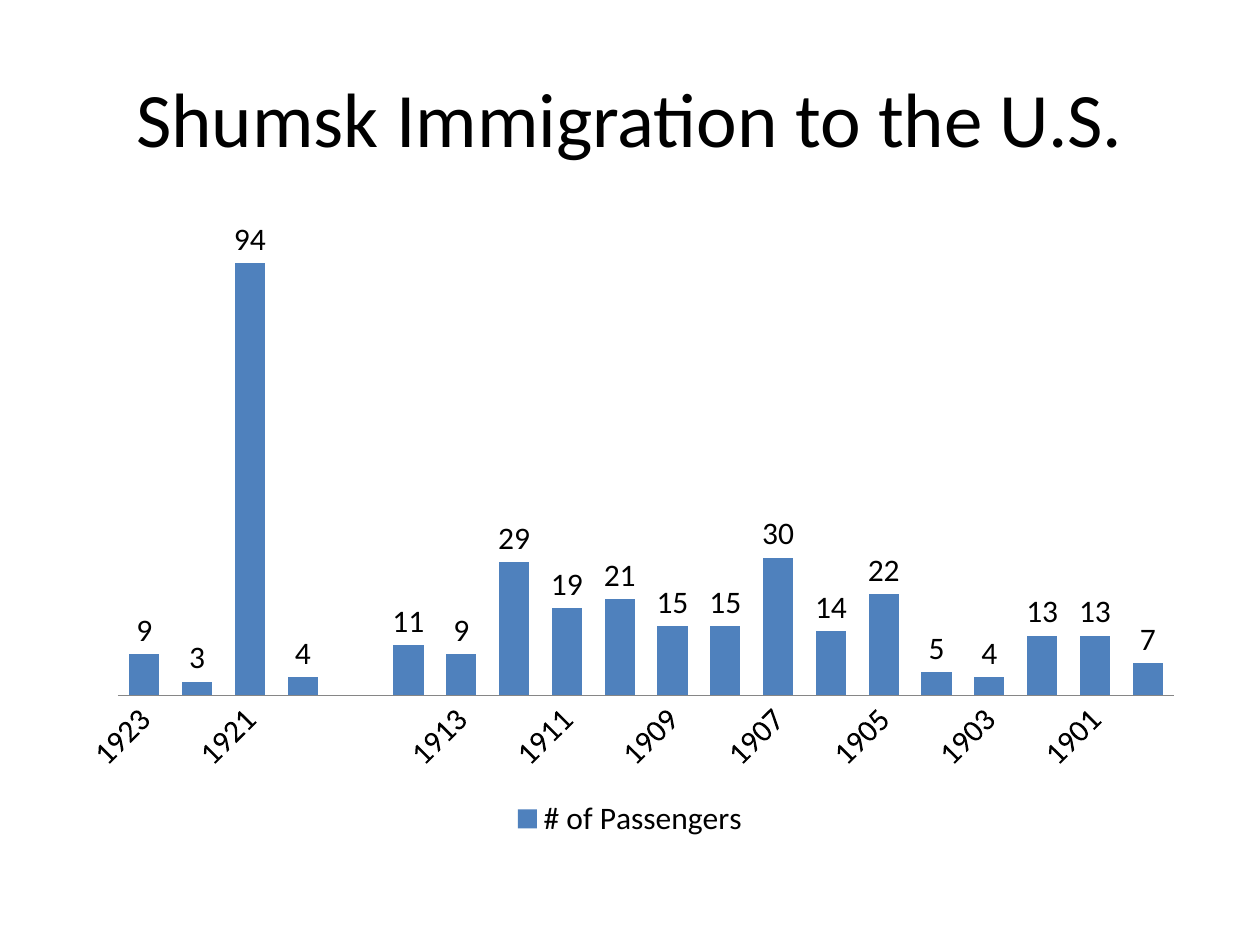
from dataclasses import dataclass

from pptx import Presentation
from pptx.chart.data import CategoryChartData
from pptx.dml.color import RGBColor
from pptx.enum.chart import XL_CHART_TYPE, XL_LABEL_POSITION, XL_LEGEND_POSITION, XL_TICK_MARK
from pptx.enum.text import MSO_ANCHOR, PP_ALIGN
from pptx.util import Inches, Pt

COLUMNS = XL_CHART_TYPE.COLUMN_CLUSTERED
OUTSIDE_END = XL_LABEL_POSITION.OUTSIDE_END
LEGEND_BOTTOM = XL_LEGEND_POSITION.BOTTOM
NO_TICKS = XL_TICK_MARK.NONE
MIDDLE = MSO_ANCHOR.MIDDLE
CENTER = PP_ALIGN.CENTER

FONT = "Calibri"
COLORS = {"text": "000000", "bar": "4F81BD", "axis": "868686"}


@dataclass
class Area:
    left: float
    top: float
    width: float
    height: float

    def lengths(self) -> tuple:
        return tuple(Inches(n) for n in (self.left, self.top, self.width, self.height))


TITLE_AREA = Area(0.5, 0.3, 9, 1.25)
CHART_AREA = Area(0.5, 1.75, 9, 4.95)

# The blank category separates the post-war years from the pre-war years.
YEARS = [*map(str, range(1923, 1919, -1)), "", *map(str, range(1914, 1899, -1))]
PASSENGERS = [9, 3, 94, 4, None, 11, 9, 29, 19, 21, 15, 15, 30, 14, 22, 5, 4, 13, 13, 7]


def color(name: str) -> RGBColor:
    return RGBColor.from_string(COLORS[name])


def style_font(font, size: float) -> None:
    font.name = FONT
    font.size = Pt(size)
    font.color.rgb = color("text")


def add_title(page, text: str, area: Area) -> None:
    box = page.shapes.add_textbox(*area.lengths())
    frame = box.text_frame
    frame.word_wrap = True
    frame.vertical_anchor = MIDDLE
    frame.text = text
    para = frame.paragraphs[0]
    para.alignment = CENTER
    style_font(para.runs[0].font, 44)


def add_passenger_chart(page, area: Area) -> None:
    data = CategoryChartData()
    data.categories = YEARS
    data.add_series("# of Passengers", PASSENGERS)
    chart = page.shapes.add_chart(COLUMNS, *area.lengths(), data).chart
    style_font(chart.font, 18)
    chart.has_title = False
    chart.has_legend = True
    chart.legend.position = LEGEND_BOTTOM
    chart.legend.include_in_layout = False

    chart.value_axis.visible = False
    chart.value_axis.has_major_gridlines = False
    year_axis = chart.category_axis
    year_axis.major_tick_mark = NO_TICKS
    year_axis.format.line.color.rgb = color("axis")

    plot = chart.plots[0]
    plot.gap_width = 75
    plot.vary_by_categories = False
    plot.has_data_labels = True
    plot.data_labels.show_value = True
    plot.data_labels.position = OUTSIDE_END
    fill = plot.series[0].format.fill
    fill.solid()
    fill.fore_color.rgb = color("bar")


def main() -> None:
    deck = Presentation()
    deck.slide_width = Inches(10)
    deck.slide_height = Inches(7.5)
    page = deck.slides.add_slide(deck.slide_layouts[6])
    add_title(page, "Shumsk Immigration to the U.S.", TITLE_AREA)
    add_passenger_chart(page, CHART_AREA)
    deck.save("out.pptx")


if __name__ == "__main__":
    main()
